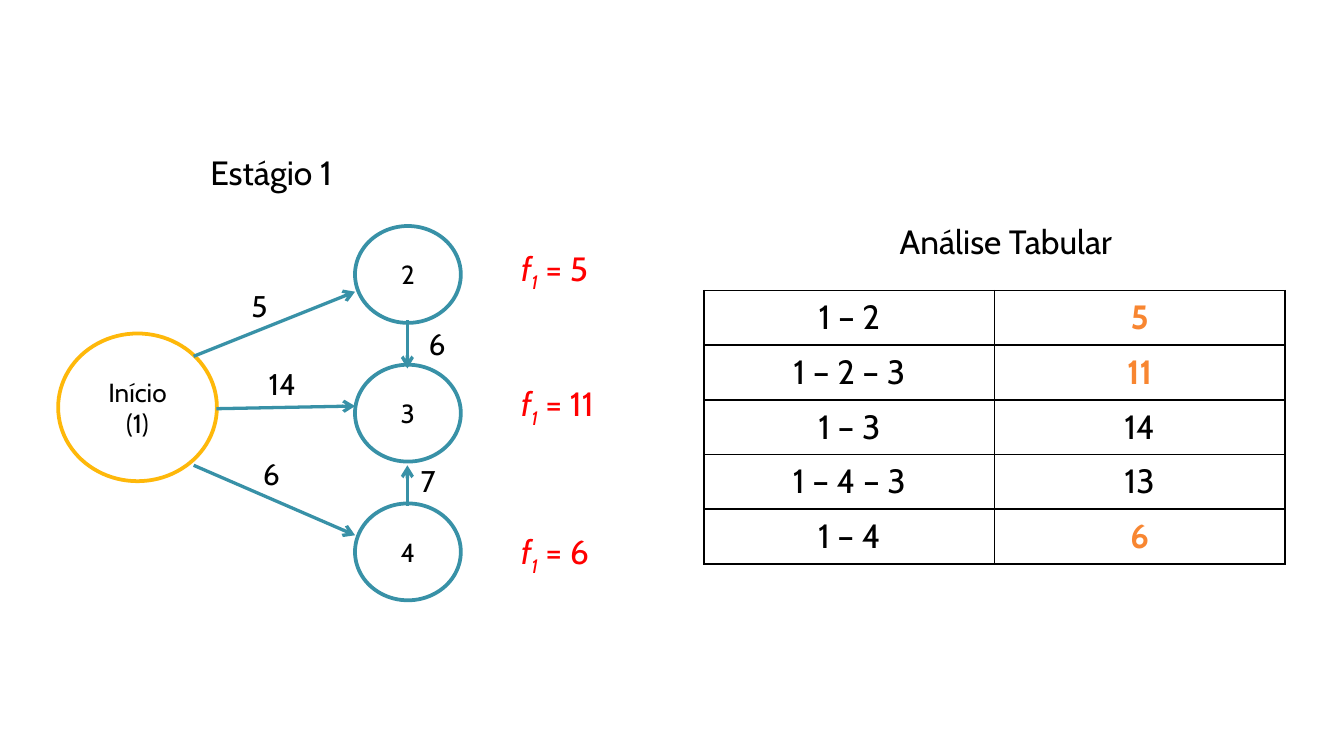
from dataclasses import dataclass

from lxml import etree
from pptx import Presentation
from pptx.dml.color import RGBColor
from pptx.enum import shapes, text
from pptx.oxml import ns
from pptx.util import Cm, Pt


@dataclass(frozen=True)
class Theme:
    font: str = "Cabin"
    ink: str = "000000"
    start: str = "FEB80A"
    node: str = "3891A7"
    cost: str = "FF0000"
    best: str = "F88631"
    head: int = 18
    label: int = 16
    body: int = 14
    ring: float = 2
    edge: float = 1.75
    rule: int = 1


THEME = Theme()
LINE_H = 1.02

# Offsets from the corner of the graph's box, in cm
EDGES = [
    (2.56, 3.99, 5.61, 2.77),
    (2.99, 4.98, 5.61, 4.93),
    (2.56, 6.05, 5.61, 7.37),
    (6.6, 3.31, 6.6, 4.22),
    (6.6, 6.81, 6.6, 6.05),
]
WEIGHTS = [
    ("5", 3.4, 2.57),
    ("14", 3.73, 4.04),
    ("6", 3.62, 5.74),
    ("6", 6.75, 3.28),
    ("7", 6.6, 5.87),
]
COSTS = [("5", 1.81), ("11", 4.37), ("6", 7.17)]

# Path, cost, whether it is the best one
PATHS = [
    ("1 – 2", "5", True),
    ("1 – 2 – 3", "11", True),
    ("1 – 3", "14", False),
    ("1 – 4 – 3", "13", False),
    ("1 – 4", "6", True),
]


def rgb(color):
    return RGBColor.from_string(color)


def style(para, size, color=THEME.ink, bold=False, center=True):
    para.alignment = text.PP_ALIGN.CENTER if center else text.PP_ALIGN.LEFT
    for run in para.runs:
        font = run.font
        font.name, font.size, font.bold = THEME.font, Pt(size), bold
        font.color.rgb = rgb(color)


def add_text(slide, x, y, w, h):
    """Add an empty text box and return its first paragraph."""
    frame = slide.shapes.add_textbox(Cm(x), Cm(y), Cm(w), Cm(h)).text_frame
    frame.word_wrap = True
    frame.auto_size = text.MSO_AUTO_SIZE.SHAPE_TO_FIT_TEXT
    frame.margin_right = 0
    return frame.paragraphs[0]


def add_head(slide, words, x, y, w):
    para = add_text(slide, x, y, w, LINE_H)
    para.text = words
    style(para, THEME.head)


def add_node(slide, words, x, y, w, h, color):
    node = slide.shapes.add_shape(
        shapes.MSO_SHAPE.OVAL, Cm(x), Cm(y), Cm(w), Cm(h))
    node.shadow.inherit = False
    node.fill.background()
    node.line.color.rgb = rgb(color)
    node.line.width = Pt(THEME.ring)
    frame = node.text_frame
    frame.text = words
    frame.vertical_anchor = text.MSO_ANCHOR.MIDDLE
    for para in frame.paragraphs:
        style(para, THEME.body)


def add_edge(slide, *ends):
    edge = slide.shapes.add_connector(
        shapes.MSO_CONNECTOR.STRAIGHT, *map(Cm, ends))
    edge.line.color.rgb = rgb(THEME.node)
    edge.line.width = Pt(THEME.edge)
    tip = etree.SubElement(edge.line._get_or_add_ln(), ns.qn("a:tailEnd"))
    tip.set("type", "arrow")
    etree.SubElement(edge._element.spPr, ns.qn("a:effectLst"))


def add_cost(slide, value, x, y):
    """Write f with a lowered 1, then its value."""
    para = add_text(slide, x, y, 3, LINE_H)
    for part in ("f", "1", f" = {value}"):
        para.add_run().text = part
    style(para, THEME.head, THEME.cost, center=False)
    name, sub, _ = para.runs
    name.font.italic = sub.font.italic = True
    sub._r.get_or_add_rPr().set("baseline", "-25000")


def add_graph(slide, x, y):
    add_head(slide, "Estágio 1", x + 0.8, y, 6.2)
    add_node(slide, "Início\n(1)", x, y + 3.56, 3, 2.79, THEME.start)
    for row, name in enumerate("234"):
        add_node(slide, name, x + 5.61, y + 1.53 + 2.62 * row,
                 2, 1.83, THEME.node)
    for x1, y1, x2, y2 in EDGES:
        add_edge(slide, x + x1, y + y1, x + x2, y + y2)
    for value, dx, dy in WEIGHTS:
        para = add_text(slide, x + dx, y + dy, 0.3 + 0.4 * len(value), 0.94)
        para.text = value
        style(para, THEME.label, center=False)
    for value, dy in COSTS:
        add_cost(slide, value, x + 8.5, y + dy)


def add_rules(cell):
    """Draw a thin line on each side of the cell."""
    props = cell._tc.get_or_add_tcPr()
    for pos, side in enumerate("LRTB"):
        line = etree.Element(ns.qn(f"a:ln{side}"), w=str(Pt(THEME.rule)))
        fill = etree.SubElement(line, ns.qn("a:solidFill"))
        etree.SubElement(fill, ns.qn("a:srgbClr"), val=THEME.ink)
        props.insert(pos, line)


def add_paths(slide, x, y, w, h):
    add_head(slide, "Análise Tabular", x + 1.98, y, 7.19)
    top = 1.45
    table = slide.shapes.add_table(
        len(PATHS), 2, Cm(x), Cm(y + top), Cm(w), Cm(h - top)).table
    table.first_row = table.horz_banding = False
    for row, (route, cost, best) in zip(table.rows, PATHS):
        for cell, words, mark in zip(row.cells, (route, cost), (False, best)):
            cell.text_frame.text = words
            cell.fill.background()
            style(cell.text_frame.paragraphs[0], THEME.head,
                  THEME.best if mark else THEME.ink, mark)
            add_rules(cell)


def main():
    deck = Presentation()
    deck.slide_width, deck.slide_height = Cm(25.4), Cm(14.28)
    slide = deck.slides.add_slide(deck.slide_layouts.get_by_name("Blank"))
    add_graph(slide, 1.1, 2.74)
    add_paths(slide, 13.31, 4.04, 10.97, 6.61)
    deck.save("out.pptx")


if __name__ == "__main__":
    main()
